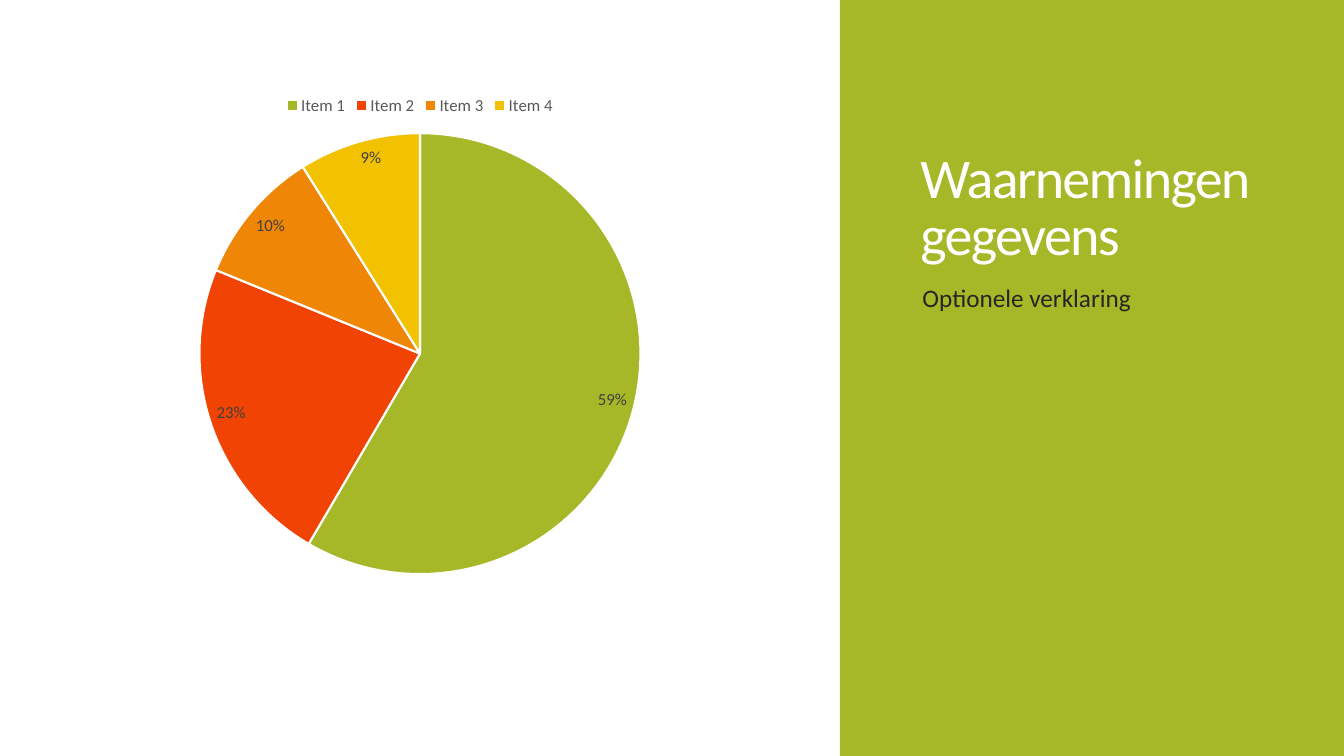
from pptx import Presentation
from pptx.chart.data import CategoryChartData
from pptx.dml.color import RGBColor
from pptx.enum.chart import XL_CHART_TYPE, XL_LABEL_POSITION, XL_LEGEND_POSITION
from pptx.enum.shapes import MSO_SHAPE
from pptx.enum.text import MSO_ANCHOR
from pptx.util import Inches, Pt

FONT = "Calibri"
WHITE = RGBColor(0xFF, 0xFF, 0xFF)
GREEN = RGBColor(0xA6, 0xB7, 0x27)
RED = RGBColor(0xF0, 0x43, 0x04)
ORANGE = RGBColor(0xEF, 0x86, 0x06)
YELLOW = RGBColor(0xF2, 0xC1, 0x00)
LEGEND_GRAY = RGBColor(0x59, 0x59, 0x59)
LABEL_GRAY = RGBColor(0x40, 0x40, 0x40)
BODY_GRAY = RGBColor(0x26, 0x26, 0x26)

ITEMS = [
    ("Item 1", 59, GREEN),
    ("Item 2", 23, RED),
    ("Item 3", 10, ORANGE),
    ("Item 4", 9, YELLOW),
]


def style_font(font, size, color):
    font.name = FONT
    font.size = Pt(size)
    font.color.rgb = color


def add_text(slide, box, text, size, color, anchor):
    shape = slide.shapes.add_textbox(*box)
    text_frame = shape.text_frame
    text_frame.word_wrap = True
    text_frame.vertical_anchor = anchor
    text_frame.text = text
    paragraph = text_frame.paragraphs[0]
    for run in paragraph.runs:
        style_font(run.font, size, color)
    return paragraph


def add_side_panel(slide, left, top, width, height):
    panel = slide.shapes.add_shape(MSO_SHAPE.RECTANGLE, left, top, width, height)
    panel.shadow.inherit = False
    panel.fill.solid()
    panel.fill.fore_color.rgb = GREEN
    panel.line.fill.background()

    title_box = (left + int(width * 0.14), top + int(height * 0.08),
                 int(width * 0.74), int(height * 0.28))
    title = add_text(slide, title_box, "Waarnemingen\vgegevens", 40, WHITE,
                     MSO_ANCHOR.BOTTOM)
    title.line_spacing = 0.85
    for run in title.runs:
        run.font._element.set("spc", "-120")

    body_box = (left + int(width * 0.144), top + int(height * 0.367),
                int(width * 0.744), int(height * 0.456))
    body = add_text(slide, body_box, "Optionele verklaring", 18, BODY_GRAY,
                    MSO_ANCHOR.TOP)
    body.space_before = Pt(12)


def add_pie_chart(slide, left, top, width, height):
    chart_data = CategoryChartData()
    chart_data.categories = [name for name, value, color in ITEMS]
    chart_data.add_series("Series 1", [value for name, value, color in ITEMS])
    chart_box = (left + int(width * 0.1), top + int(height / 9),
                 int(width * 0.8), int(height * 2 / 3))
    chart = slide.shapes.add_chart(XL_CHART_TYPE.PIE, *chart_box, chart_data).chart
    chart.has_title = False
    chart.font.name = FONT
    chart.font.size = Pt(10)

    chart.has_legend = True
    chart.legend.position = XL_LEGEND_POSITION.TOP
    chart.legend.include_in_layout = False
    style_font(chart.legend.font, 12, LEGEND_GRAY)

    plot = chart.plots[0]
    plot.vary_by_categories = True
    plot.has_data_labels = True
    labels = plot.data_labels
    labels.show_value = True
    labels.number_format = '0"%"'
    labels.number_format_is_linked = False
    labels.position = XL_LABEL_POSITION.INSIDE_END
    style_font(labels.font, 12, LABEL_GRAY)

    for index, (name, value, color) in enumerate(ITEMS):
        slice_format = plot.series[0].points[index].format
        slice_format.fill.solid()
        slice_format.fill.fore_color.rgb = color
        slice_format.line.color.rgb = WHITE
        slice_format.line.width = Pt(1.5)


def main():
    presentation = Presentation()
    presentation.slide_width = Inches(13.33)
    presentation.slide_height = Inches(7.5)
    slide = presentation.slides.add_slide(presentation.slide_layouts[6])
    width, height = presentation.slide_width, presentation.slide_height
    split = int(width * 5 / 8)
    add_side_panel(slide, split, 0, width - split, height)
    add_pie_chart(slide, 0, 0, split, height)
    presentation.save("out.pptx")


if __name__ == "__main__":
    main()
